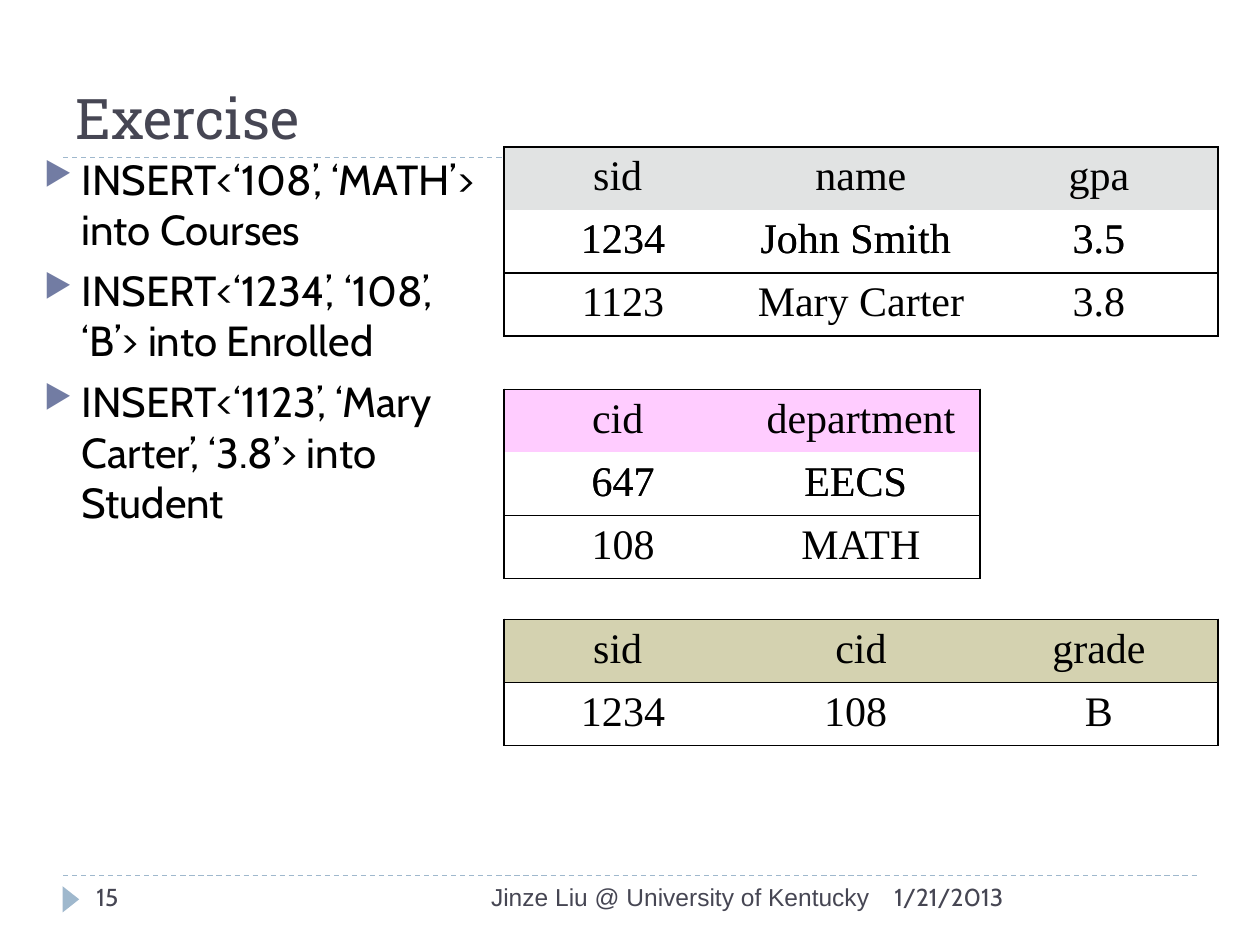
from lxml.etree import SubElement
from pptx import Presentation
from pptx.dml.color import RGBColor
from pptx.enum.dml import MSO_LINE
from pptx.enum.shapes import MSO_CONNECTOR, MSO_SHAPE
from pptx.enum.text import MSO_ANCHOR, PP_ALIGN
from pptx.oxml.ns import qn
from pptx.util import Pt

HUE = {
    "ink": "464653", "black": "000000", "rule": "9FB8CD", "mark": "727CA3",
    "student": "E1E3E3", "course": "FFCCFF", "enroll": "D4D2B0",
}
ROW, COL = 30, 136

# Rows of each table, and how many of them show before the inserts
STUDENT = [["sid ", "name", "gpa"], ["1234", "John Smith ", "3.5"],
           ["1123", "Mary Carter ", "3.8"]]
COURSE = [["cid ", "department"], ["647", "EECS "], ["108", "MATH"]]
ENROLL = [["sid ", "cid", "grade"], ["1234", "108 ", "B"]]
STEPS = [
    (84, "student", STUDENT[:2]), (222.5, "course", COURSE),
    (354, "enroll", ENROLL), (222.5, "course", COURSE[:2]),
    (354, "enroll", ENROLL[:1]), (84, "student", STUDENT),
]
TASKS = [
    "INSERT<‘108’, ‘MATH’> into Courses",
    "INSERT<‘1234’, ‘108’, ‘B’> into Enrolled",
    "INSERT<‘1123’, ‘Mary Carter’, ‘3.8’> into Student",
]


def tint(name):
    return RGBColor.from_string(HUE[name])


def write(para, text, size=14, font="Cabin", hue="ink", align=PP_ALIGN.LEFT):
    para.alignment = align
    run = para.add_run()
    run.text = text
    run.font.size, run.font.name = Pt(size), font
    run.font.color.rgb = tint(hue)


def add_box(slide, box):
    frame = slide.shapes.add_textbox(*map(Pt, box)).text_frame
    frame.word_wrap = True
    return frame


def add_rule(slide, left, top, width):
    rule = slide.shapes.add_connector(
        MSO_CONNECTOR.STRAIGHT, Pt(left), Pt(top), Pt(left + width), Pt(top))
    rule.line.color.rgb = tint("rule")
    rule.line.width = Pt(0.75)
    rule.line.dash_style = MSO_LINE.DASH
    SubElement(rule._element.spPr, qn("a:effectLst"))


def add_title(slide, box, text):
    left, top, width, height = box
    add_rule(slide, left, top + height, width)
    title = slide.shapes.title
    title.left, title.top, title.width, title.height = map(Pt, box)
    title.text_frame.vertical_anchor = MSO_ANCHOR.BOTTOM
    write(title.text_frame.paragraphs[0], text, size=32, font="Roboto Slab")


def add_foot(slide, box):
    left, top, width, height = box
    add_rule(slide, left, top, width)
    mark = slide.shapes.add_shape(
        MSO_SHAPE.ISOSCELES_TRIANGLE, Pt(left - 3), Pt(top + 8.75), Pt(15), Pt(9.5))
    mark.rotation = 90
    mark.shadow.inherit = False
    mark.fill.solid()
    mark.fill.fore_color.rgb = tint("rule")
    mark.line.fill.background()
    parts = [
        (12, 156, "15", {}),
        (192, 276, "Jinze Liu @ University of Kentucky",
         {"font": "Arial", "align": PP_ALIGN.RIGHT}),
        (468, 180, "1/21/2013", {}),
    ]
    for shift, wide, text, style in parts:
        frame = add_box(slide, (left + shift, top, wide, height))
        write(frame.paragraphs[0], text, **style)


def add_list(slide, box, items):
    frame = add_box(slide, box)
    for i, item in enumerate(items):
        para = frame.add_paragraph() if i else frame.paragraphs[0]
        para.space_before = Pt(6)
        write(para, item, size=24, hue="black")
        props = para._p.get_or_add_pPr()
        props.set("marL", str(Pt(21.6)))
        props.set("indent", str(-Pt(21.6)))
        color = SubElement(props, qn("a:buClr"))
        SubElement(color, qn("a:srgbClr"), val=HUE["mark"])
        SubElement(props, qn("a:buSzPct"), val="76000")
        SubElement(props, qn("a:buChar"), char="▶")


def set_edge(cell, sides):
    props = cell._tc.get_or_add_tcPr()
    for side in "LRTB":
        line = SubElement(props, qn("a:ln" + side), w=str(Pt(1)))
        if side in sides:
            fill = SubElement(line, qn("a:solidFill"))
            SubElement(fill, qn("a:srgbClr"), val=HUE["black"])
        else:
            SubElement(line, qn("a:noFill"))


def add_grid(slide, left, top, hue, rows):
    high, wide = len(rows), len(rows[0])
    grid = slide.shapes.add_table(
        high, wide, Pt(left), Pt(top), Pt(COL * wide), Pt(ROW * high)).table
    grid.first_row = grid.horz_banding = False
    for r, row in enumerate(rows):
        for c, text in enumerate(row):
            cell = grid.cell(r, c)
            edges = {"L": c == 0, "R": c == wide - 1,
                     "T": r == 0, "B": r == high - 1}
            set_edge(cell, [side for side, on in edges.items() if on])
            if r == 0:
                cell.fill.solid()
                cell.fill.fore_color.rgb = tint(hue)
            else:
                cell.fill.background()
            write(cell.text_frame.paragraphs[0], text, size=24,
                  font="Times New Roman", hue="black", align=PP_ALIGN.CENTER)


def main():
    deck = Presentation()
    deck.slide_width, deck.slide_height = Pt(720), Pt(540)
    slide = deck.slides.add_slide(deck.slide_layouts[5])

    # Title, footer and list of inserts
    add_title(slide, (36, 12, 648, 78), "Exercise")
    add_foot(slide, (36, 500.4, 648, 28.8))
    add_list(slide, (18, 84, 264, 414), TASKS)

    # Tables before and after the inserts, stacked in place
    for top, hue, rows in STEPS:
        add_grid(slide, 288, top, hue, rows)

    deck.save("out.pptx")


if __name__ == "__main__":
    main()
